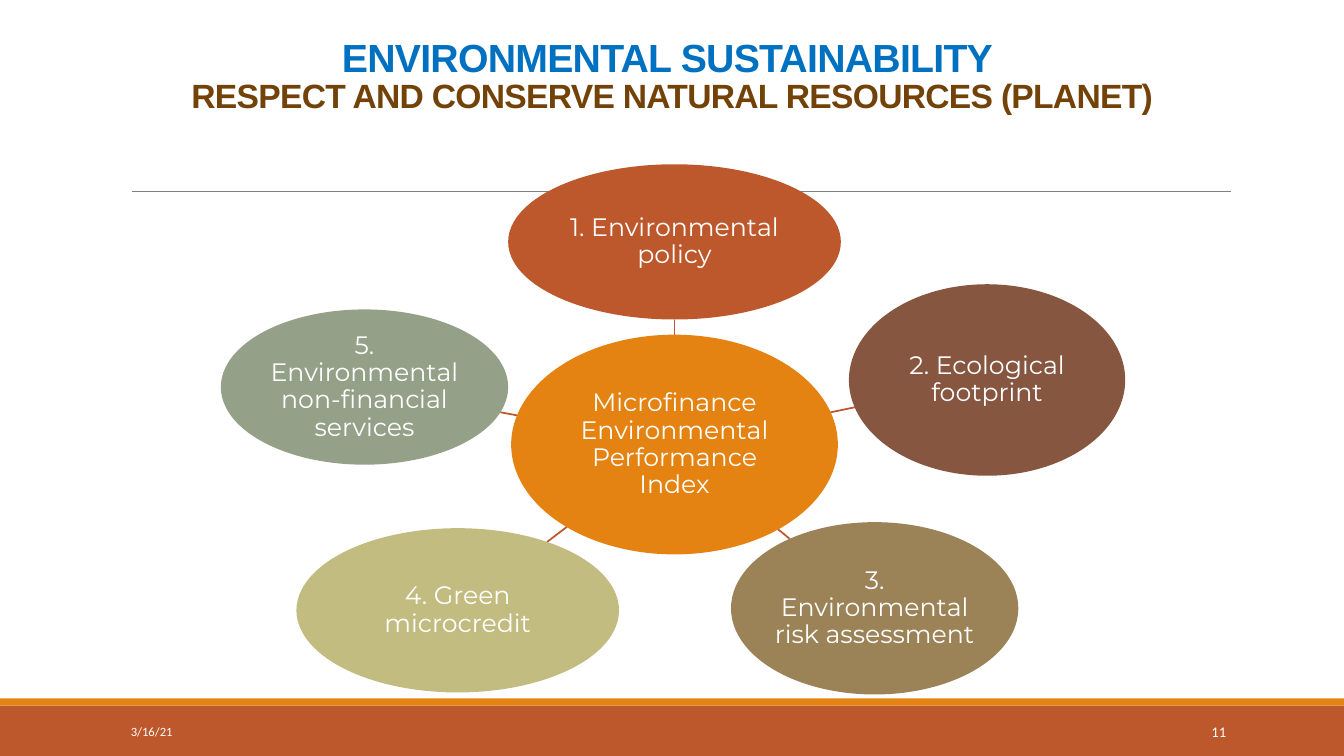
import math
from dataclasses import dataclass

from pptx import Presentation
from pptx.dml.color import RGBColor
from pptx.enum import shapes, text
from pptx.oxml.ns import qn
from pptx.util import Inches, Pt


@dataclass(frozen=True)
class Theme:
    rust: str = "BD582C"
    orange: str = "E48312"
    blue: str = "0070C0"
    brown: str = "724209"
    rule: str = "808080"
    white: str = "FFFFFF"
    title_font: str = "Arial"
    label_font: str = "Montserrat"
    footer_font: str = "Calibri"
    title_size: float = 28
    subtitle_size: float = 24
    label_size: float = 18
    date_size: float = 9
    number_size: float = 10.5


THEME = Theme()
SLIDE_W, SLIDE_H = 13.33, 7.5
HUB = ("Microfinance Environmental Performance Index",
       (3.88, 1.69, 3.24, 2.18), THEME.orange)
# Label, box relative to the diagram, fill
SPOKES = [
    ("1. Environmental policy", (3.85, 0, 3.3, 1.54), THEME.rust),
    ("2. Ecological footprint", (7.23, 1.19, 2.74, 1.9), "865640"),
    ("3. Environmental risk assessment", (6.06, 3.55, 2.85, 1.71), "9B8357"),
    ("4. Green microcredit", (1.75, 3.61, 3.2, 1.63), "C2BC80"),
    ("5. Environmental non-financial services", (1, 1.44, 2.85, 1.54), "94A088"),
]


def style_run(r, font, size, color, bold=False):
    r.font.name, r.font.size, r.font.bold = font, Pt(size), bold
    r.font.color.rgb = RGBColor.from_string(color)


def add_filled(s, kind, box, color):
    sp = s.shapes.add_shape(kind, *map(Inches, box))
    sp.shadow.inherit = False
    sp.fill.solid()
    sp.fill.fore_color.rgb = RGBColor.from_string(color)
    sp.line.fill.background()
    return sp


def add_line(s, start, end, color, width):
    line = s.shapes.add_connector(shapes.MSO_CONNECTOR.STRAIGHT,
                                  *map(Inches, (*start, *end)))
    line.line.color.rgb = RGBColor.from_string(color)
    line.line.width = Pt(width)
    props = line._element.spPr
    props.append(props.makeelement(qn("a:effectLst"), {}))


def add_title(s, box):
    sp = s.shapes.title
    sp.left, sp.top, sp.width, sp.height = map(Inches, box)
    tf = sp.text_frame
    tf.text = ("ENVIRONMENTAL SUSTAINABILITY \v"
               "RESPECT AND CONSERVE NATURAL RESOURCES (PLANET)")
    tf.vertical_anchor = text.MSO_ANCHOR.BOTTOM
    tf.auto_size = text.MSO_AUTO_SIZE.NONE
    p = tf.paragraphs[0]
    p.alignment, p.line_spacing = text.PP_ALIGN.CENTER, 0.85
    styles = [(THEME.title_size, THEME.blue), (THEME.subtitle_size, THEME.brown)]
    for r, (size, color) in zip(p.runs, styles):
        style_run(r, THEME.title_font, size, color, bold=True)
        r.font._element.set("spc", "-50")


def add_footer(s, box):
    x, y, w, h = box
    stripe = 0.07
    add_filled(s, shapes.MSO_SHAPE.RECTANGLE,
               (x, y + stripe, w, h - stripe), THEME.rust)
    add_filled(s, shapes.MSO_SHAPE.RECTANGLE, (x, y, w, stripe), THEME.orange)
    items = [("3/16/21", 1.2, 2.7, THEME.date_size, text.PP_ALIGN.LEFT),
             ("11", 10.83, 1.43, THEME.number_size, text.PP_ALIGN.RIGHT)]
    for label, left, width, size, align in items:
        sp = s.shapes.add_textbox(
            *map(Inches, (x + left, y + 0.13, width, 0.4)))
        tf = sp.text_frame
        tf.text, tf.word_wrap = label, True
        tf.vertical_anchor = text.MSO_ANCHOR.MIDDLE
        p = tf.paragraphs[0]
        p.alignment = align
        style_run(p.runs[0], THEME.footer_font, size, THEME.white)


def add_bubble(s, label, box, color):
    sp = add_filled(s, shapes.MSO_SHAPE.OVAL, box, color)
    tf = sp.text_frame
    tf.text, tf.word_wrap = label, True
    tf.vertical_anchor = text.MSO_ANCHOR.MIDDLE
    tf.margin_left = tf.margin_right = Inches(0.01)
    tf.margin_top = tf.margin_bottom = Inches(0.01)
    p = tf.paragraphs[0]
    p.alignment, p.line_spacing = text.PP_ALIGN.CENTER, 0.9
    style_run(p.runs[0], THEME.label_font, THEME.label_size, THEME.white)


def center(box):
    x, y, w, h = box
    return x + w / 2, y + h / 2


def edge_point(box, target):
    """Point where the ellipse in box meets the ray towards target."""
    cx, cy = center(box)
    dx, dy = target[0] - cx, target[1] - cy
    t = 1 / math.hypot(dx / (box[2] / 2), dy / (box[3] / 2))
    return cx + t * dx, cy + t * dy


def add_diagram(s, box):
    def place(part):
        return box[0] + part[0], box[1] + part[1], *part[2:]

    label, part, color = HUB
    hub = place(part)
    add_bubble(s, label, hub, color)
    for label, part, color in SPOKES:
        spoke = place(part)
        add_line(s, edge_point(hub, center(spoke)),
                 edge_point(spoke, center(hub)), THEME.rust, 1.25)
        add_bubble(s, label, spoke, color)


def main():
    prs = Presentation()
    prs.slide_width, prs.slide_height = Inches(SLIDE_W), Inches(SLIDE_H)
    s = prs.slides.add_slide(prs.slide_layouts[5])
    # Footer band and header rule
    add_footer(s, (0, 6.93, SLIDE_W, 0.57))
    add_line(s, (1.31, 1.9), (12.21, 1.9), THEME.rule, 0.5)
    # Title and hub-and-spoke diagram
    add_title(s, (0.65, 0, 12.03, 1.19))
    add_diagram(s, (1.19, 1.63, 11, 5.3))
    prs.save("out.pptx")


if __name__ == "__main__":
    main()
